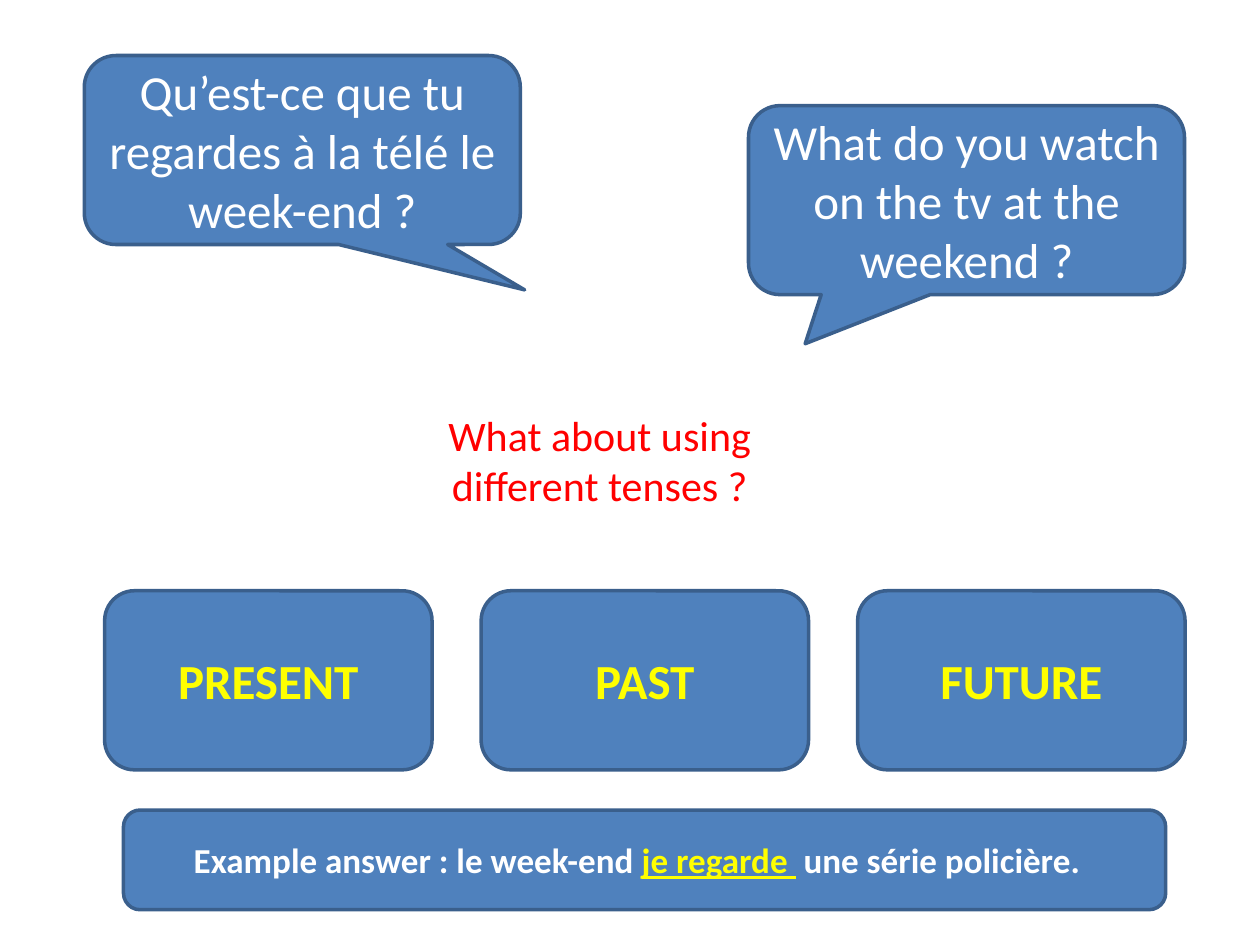
from dataclasses import dataclass

from pptx import Presentation
from pptx.dml.color import RGBColor
from pptx.enum.shapes import MSO_SHAPE as Shape
from pptx.enum.text import MSO_ANCHOR as Anchor, PP_ALIGN as Align
from pptx.util import Cm, Pt


@dataclass(frozen=True)
class Theme:
    font: str = "Calibri"
    fill: str = "4F81BD"
    line: str = "3A5F8C"
    white: str = "FFFFFF"
    yellow: str = "FFFF00"
    red: str = "FF0000"
    border: float = 2
    large: int = 28
    medium: int = 24
    small: int = 20


THEME = Theme()


def rgb(value):
    return RGBColor.from_string(value)


def add_run(p, text, size, color, bold=False, underline=False):
    r = p.add_run()
    r.text = text
    r.font.name = THEME.font
    r.font.size = Pt(size)
    r.font.color.rgb = rgb(color)
    r.font.bold = bold
    r.font.underline = underline


def centred_paragraph(sp, anchor):
    tf = sp.text_frame
    tf.word_wrap = True
    tf.vertical_anchor = anchor
    p = tf.paragraphs[0]
    p.alignment = Align.CENTER
    return p


def add_box(s, kind, left, top, width, height):
    sp = s.shapes.add_shape(kind, Cm(left), Cm(top), Cm(width), Cm(height))
    sp.shadow.inherit = False
    sp.fill.solid()
    sp.fill.fore_color.rgb = rgb(THEME.fill)
    sp.line.color.rgb = rgb(THEME.line)
    sp.line.width = Pt(THEME.border)
    return sp


def add_speech_bubble(s, left, top, tail, text):
    sp = add_box(s, Shape.ROUNDED_RECTANGULAR_CALLOUT, left, top, 8.79, 3.81)
    sp.adjustments[0], sp.adjustments[1] = tail
    add_run(centred_paragraph(sp, Anchor.MIDDLE), text, THEME.large, THEME.white)


def add_prompt(s, text):
    sp = s.shapes.add_textbox(Cm(7.29), Cm(8.13), Cm(9.6), Cm(2.31))
    add_run(centred_paragraph(sp, Anchor.TOP), text, THEME.medium, THEME.red)


def add_tenses(s, names):
    left, pitch = 2.11, 7.59
    for i, name in enumerate(names):
        sp = add_box(s, Shape.ROUNDED_RECTANGLE, left + i * pitch, 11.91, 6.6, 3.61)
        p = centred_paragraph(sp, Anchor.MIDDLE)
        add_run(p, name, THEME.large, THEME.yellow, bold=True)


def add_example(s, before, verb, after):
    sp = add_box(s, Shape.ROUNDED_RECTANGLE, 2.49, 16.33, 21.01, 2.01)
    sp.text_frame.margin_right = Cm(0.56)
    p = centred_paragraph(sp, Anchor.MIDDLE)
    add_run(p, before, THEME.small, THEME.white, bold=True)
    add_run(p, verb, THEME.small, THEME.yellow, bold=True, underline=True)
    add_run(p, after, THEME.small, THEME.white, bold=True)


def main():
    prs = Presentation()
    prs.slide_width, prs.slide_height = Cm(25.4), Cm(19.05)
    s = prs.slides.add_slide(prs.slide_layouts[6])
    add_speech_bubble(s, 1.7, 1.12, (0.51, 0.74),
                      "Qu’est-ce que tu regardes à la télé le week-end ?")
    add_speech_bubble(s, 15.09, 2.13, (-0.37, 0.76),
                      "What do you watch on the tv at the weekend ?")
    add_prompt(s, "What about using different tenses ?")
    add_tenses(s, ("PRESENT", "PAST", "FUTURE"))
    add_example(s, "Example answer : le week-end ", "je regarde ", " une série policière.")
    prs.save("out.pptx")


if __name__ == "__main__":
    main()
